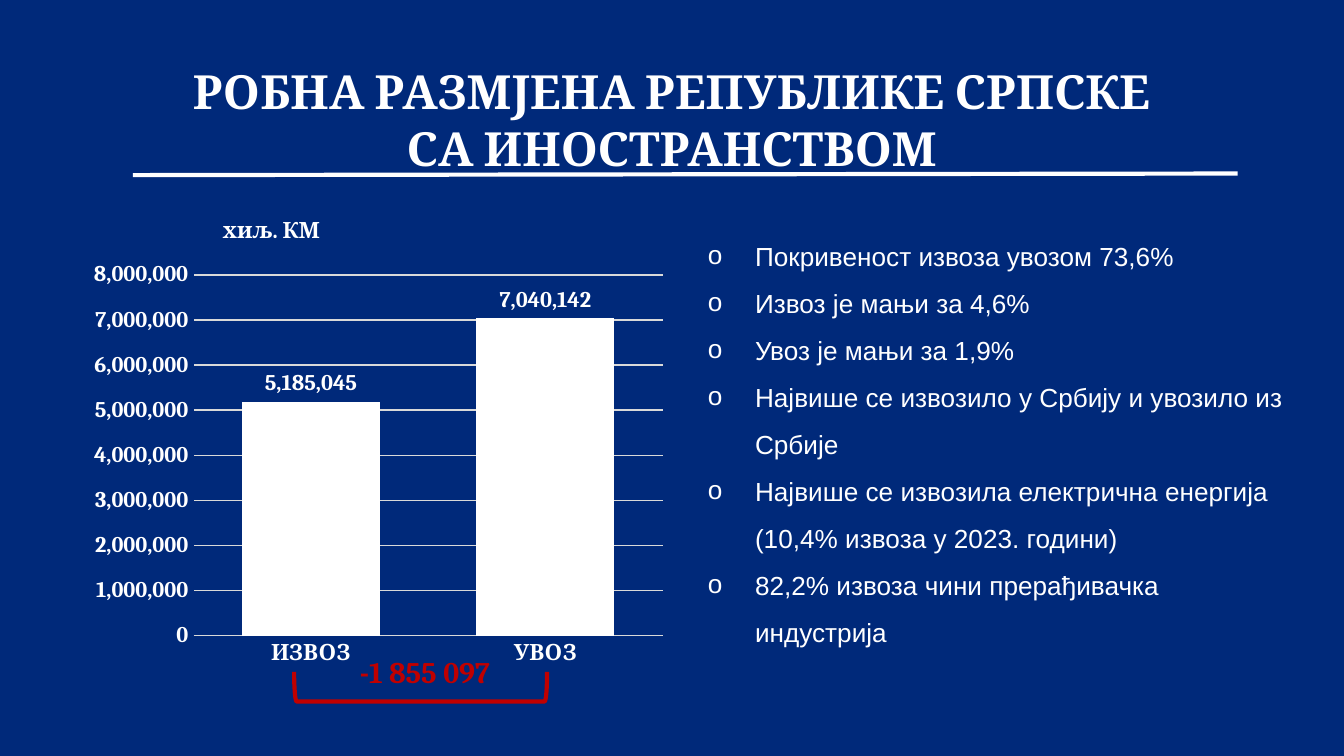
from lxml.etree import SubElement
from pptx import Presentation
from pptx.chart.data import CategoryChartData
from pptx.dml.color import RGBColor
from pptx.enum.chart import XL_CHART_TYPE as ChartType, XL_LABEL_POSITION as LabelPosition
from pptx.enum.chart import XL_TICK_MARK as TickMark
from pptx.enum.shapes import MSO_CONNECTOR as Connector, MSO_SHAPE as Shape
from pptx.enum.text import PP_ALIGN as Align
from pptx.oxml.ns import qn
from pptx.util import Cm, Pt

NAVY = RGBColor(0x00, 0x29, 0x7A)
WHITE = RGBColor(0xFF, 0xFF, 0xFF)
RED = RGBColor(0xC0, 0x00, 0x00)
GRID_GREY = RGBColor(0xD9, 0xD9, 0xD9)

TITLE_FORMAT = {"name": "Cambria", "size": Pt(25.2), "bold": True, "color": WHITE}
CHART_FORMAT = {"name": "Cambria", "size": Pt(12), "bold": True, "color": WHITE}
BALANCE_FORMAT = {"name": "Cambria", "size": Pt(16), "bold": True, "color": RED}
FINDING_FORMAT = {"name": "Arial", "size": Pt(14), "bold": False, "color": WHITE}

TITLE = "РОБНА РАЗМЈЕНА РЕПУБЛИКЕ СРПСКЕ\vСА ИНОСТРАНСТВОМ"
TRADE = {"ИЗВОЗ": 5185045, "УВОЗ": 7040142}
FINDINGS = [
    "Покривеност извоза увозом 73,6%",
    "Извоз је мањи за 4,6%",
    "Увоз је мањи за 1,9%",
    "Највише се извозило у Србију и увозило из Србије",
    "Највише се извозила електрична енергија (10,4% извоза у 2023. години)",
    "82,2% извоза чини прерађивачка индустрија",
]


def apply_format(font, values):
    for attribute, value in values.items():
        if attribute == "color":
            font.color.rgb = value
        else:
            setattr(font, attribute, value)


def style_line(line, color, width):
    line.color.rgb = color
    line.width = Pt(width)


def add_bullet(paragraph):
    """Give the paragraph a hanging white "o" bullet."""
    properties = paragraph._p.get_or_add_pPr()
    properties.set("marL", str(Cm(1.27)))
    properties.set("indent", str(Cm(-0.89)))
    bullet_color = SubElement(properties, qn("a:buClr"))
    SubElement(bullet_color, qn("a:srgbClr"), val=str(WHITE))
    SubElement(properties, qn("a:buFont"), typeface="Arial")
    SubElement(properties, qn("a:buChar"), char="o")


def add_text(slide, bounds, lines, values, align=Align.LEFT, spacing=1.0,
             bulleted=False, wrap=True):
    frame = slide.shapes.add_textbox(*map(Cm, bounds)).text_frame
    frame.word_wrap = wrap
    for index, line in enumerate(lines):
        paragraph = frame.add_paragraph() if index else frame.paragraphs[0]
        if bulleted:
            add_bullet(paragraph)
        paragraph.text = line
        paragraph.alignment = align
        paragraph.line_spacing = spacing
        for run in paragraph.runs:
            apply_format(run.font, values)
    return frame


def add_title(slide):
    frame = add_text(slide, (0.86, 0.94, 23.67, 2.54), [TITLE], TITLE_FORMAT, Align.CENTER)
    frame.margin_top = Cm(0.25)
    rule = slide.shapes.add_connector(
        Connector.STRAIGHT, Cm(2.51), Cm(3.31), Cm(23.39), Cm(3.28))
    style_line(rule.line, WHITE, 2.25)
    SubElement(rule._element.spPr, qn("a:effectLst"))


def add_trade_chart(slide):
    data = CategoryChartData(number_format="#,##0")
    data.categories = list(TRADE)
    data.add_series("Series 1", list(TRADE.values()))
    chart = slide.shapes.add_chart(
        ChartType.COLUMN_CLUSTERED, Cm(1.55), Cm(4.8), Cm(11.2), Cm(7.95), data).chart
    chart.has_legend = False
    chart.has_title = False
    apply_format(chart.font, CHART_FORMAT)

    plot = chart.plots[0]
    plot.gap_width = 70
    plot.overlap = -27
    plot.vary_by_categories = False
    columns = plot.series[0].format
    columns.fill.solid()
    columns.fill.fore_color.rgb = WHITE
    columns.line.fill.background()

    plot.has_data_labels = True
    labels = plot.data_labels
    labels.show_value = True
    labels.position = LabelPosition.OUTSIDE_END
    apply_format(labels.font, CHART_FORMAT)

    for axis in (chart.category_axis, chart.value_axis):
        axis.major_tick_mark = axis.minor_tick_mark = TickMark.NONE
        apply_format(axis.tick_labels.font, CHART_FORMAT)
    style_line(chart.category_axis.format.line, GRID_GREY, 0.75)

    values = chart.value_axis
    values.minimum_scale, values.maximum_scale, values.major_unit = 0, 8000000, 1000000
    values.tick_labels.number_format = "#,##0"
    values.tick_labels.number_format_is_linked = False
    values.format.line.fill.background()
    style_line(values.major_gridlines.format.line, GRID_GREY, 0.75)


def add_balance(slide):
    """Join the two columns with a bracket that carries the trade deficit."""
    bracket = slide.shapes.add_shape(
        Shape.LEFT_BRACKET, Cm(7.67), Cm(10.59), Cm(0.56), Cm(4.78))
    bracket.rotation = 270
    bracket.shadow.inherit = False
    bracket.fill.background()
    style_line(bracket.line, RED, 2.25)
    add_text(slide, (6.55, 12.24, 3.33, 0.94), ["-1 855 097"], BALANCE_FORMAT, wrap=False)


def main():
    deck = Presentation()
    deck.slide_width, deck.slide_height = Cm(25.4), Cm(14.29)
    slide = deck.slides.add_slide(deck.slide_layouts[6])
    background = slide.background.fill
    background.solid()
    background.fore_color.rgb = NAVY

    add_title(slide)
    add_text(slide, (3.96, 3.89, 4, 0.9), ["хиљ. КМ"], CHART_FORMAT, spacing=1.15)
    findings = add_text(slide, (12.75, 3.99, 11.79, 8.69), FINDINGS, FINDING_FORMAT,
                        spacing=1.5, bulleted=True)
    findings.margin_top = Cm(0.25)
    add_trade_chart(slide)
    add_balance(slide)
    deck.save("out.pptx")


if __name__ == "__main__":
    main()
